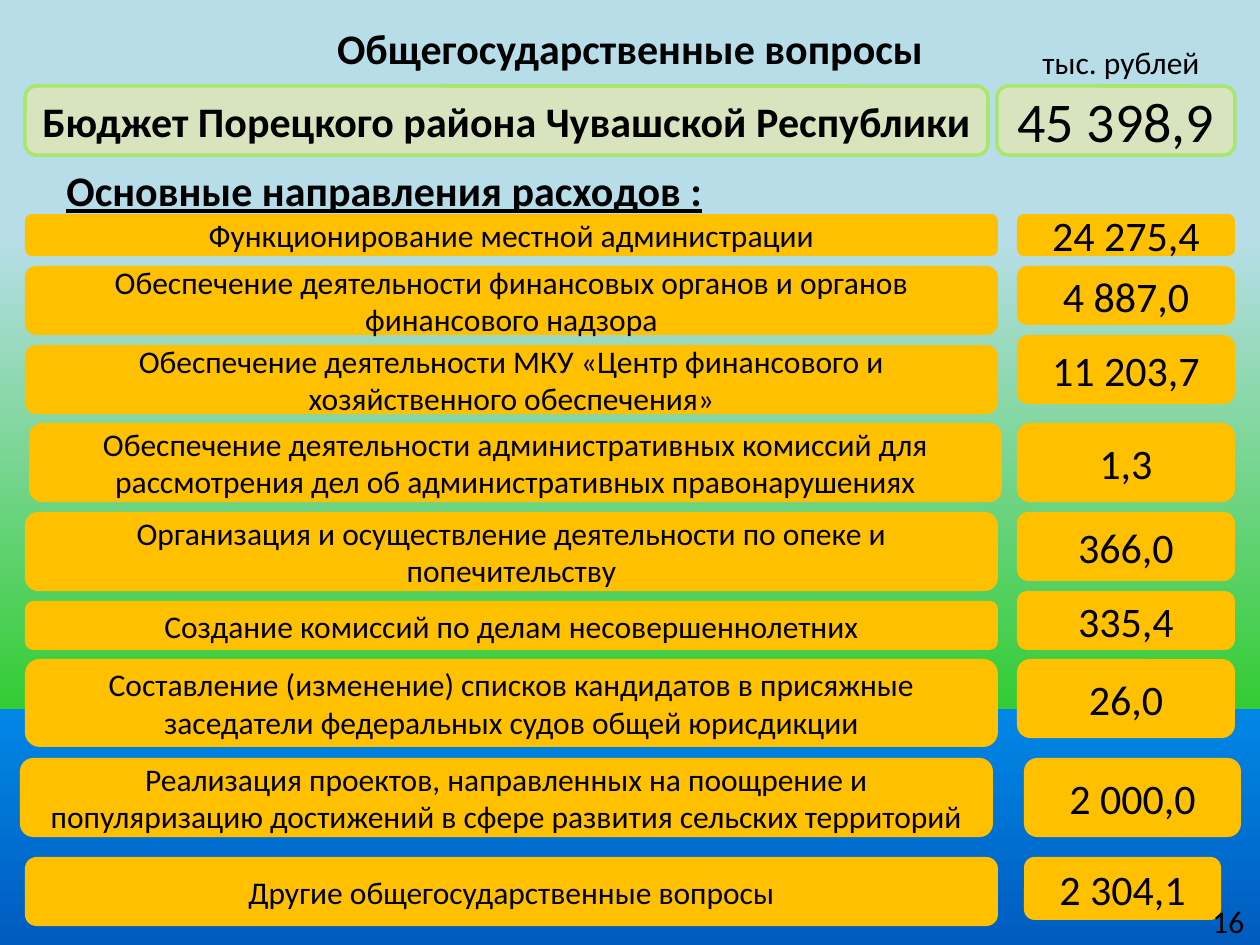
from lxml import etree
from pptx import Presentation
from pptx.dml.color import RGBColor
from pptx.enum.shapes import MSO_SHAPE
from pptx.enum.text import MSO_ANCHOR, PP_ALIGN
from pptx.oxml.ns import qn
from pptx.util import Emu, Pt

SCALE = 914400 / 126
FONT = "Calibri"
BLACK, AMBER, PALE_GREEN, GREEN = "000000", "FFC000", "D7E4BD", "A9E66C"

BACKGROUND = [(25, "B7DEE8"), (75, "33CC33"), (75, "0087E6"), (100, "005CBF")]

TITLE = "Общегосударственные вопросы"
UNIT = "тыс. рублей"
BUDGET = "Бюджет Порецкого района Чувашской Республики"
TOTAL = "45 398,9"
HEADING = "Основные направления расходов :"
PAGE = "16"

LABEL_X, LABEL_W = 25, 973
VALUE_X, VALUE_W = 1017, 218

# label, its top and height, value, its top and height
EXPENSES = [
    ("Функционирование местной администрации", 214, 42, "24 275,4", 214, 42),
    ("Обеспечение деятельности финансовых органов и органов финансового надзора",
     266, 69, "4 887,0", 266, 59),
    ("Обеспечение деятельности МКУ «Центр финансового и хозяйственного обеспечения»",
     345, 69, "11 203,7", 335, 69),
    ("Обеспечение деятельности административных комиссий для рассмотрения дел "
     "об административных правонарушениях", 423, 79, "1,3", 423, 79),
    ("Организация и осуществление деятельности по опеке и попечительству",
     512, 79, "366,0", 512, 69),
    ("Создание комиссий по делам несовершеннолетних", 601, 49, "335,4", 591, 59),
    ("Составление (изменение) списков кандидатов в присяжные заседатели "
     "федеральных судов общей юрисдикции", 659, 88, "26,0", 659, 79),
    ("Реализация проектов, направленных на поощрение и популяризацию достижений "
     "в сфере развития сельских территорий", 758, 79, "2 000,0", 758, 79),
    ("Другие общегосударственные вопросы", 857, 69, "2 304,1", 857, 63),
]
# row: left and width where they differ from the column's
LABEL_SHIFTS = {3: (29, LABEL_W), 7: (20, LABEL_W)}
VALUE_SHIFTS = {7: (1024, 217), 8: (1024, 197)}


def px(n):
    return Emu(round(n * SCALE))


def color(value):
    return RGBColor.from_string(value)


def set_text(sp, text, size, bold=False, underline=False, align=PP_ALIGN.CENTER):
    tf = sp.text_frame
    tf.text = text
    tf.word_wrap = True
    tf.vertical_anchor = MSO_ANCHOR.MIDDLE
    p = tf.paragraphs[0]
    p.alignment = align
    font = p.runs[0].font
    font.name, font.size = FONT, Pt(size)
    font.bold, font.underline = bold, underline
    font.color.rgb = color(BLACK)


def add_box(slide, box, text, size, fill=AMBER, line=None, bold=False):
    sp = slide.shapes.add_shape(MSO_SHAPE.ROUNDED_RECTANGLE, *map(px, box))
    sp.shadow.inherit = False
    sp.fill.solid()
    sp.fill.fore_color.rgb = color(fill)
    if line:
        sp.line.color.rgb = color(line)
        sp.line.width = Pt(2)
    else:
        sp.line.fill.background()
    set_text(sp, text, size, bold)


def add_label(slide, box, text, size, **style):
    set_text(slide.shapes.add_textbox(*map(px, box)), text, size, **style)


def set_background(slide, stops):
    fill = slide.background.fill
    fill.gradient()
    fill.gradient_angle = 270  # counter-clockwise: runs from top to bottom
    gs_list = next(slide.background._cSld.iter(qn("a:gsLst")))
    for gs in list(gs_list):
        gs_list.remove(gs)
    for position, value in stops:
        gs = etree.SubElement(gs_list, qn("a:gs"), pos=str(position * 1000))
        etree.SubElement(gs, qn("a:srgbClr"), val=value)


def main():
    prs = Presentation()
    prs.slide_width, prs.slide_height = px(1260), px(945)
    slide = prs.slides.add_slide(prs.slide_layouts[5])
    set_background(slide, BACKGROUND)

    title = slide.shapes.title
    title.left, title.top, title.width, title.height = map(px, (0, 0, 1260, 96))
    set_text(title, TITLE, 24, bold=True)

    add_box(slide, (25, 86, 963, 69), BUDGET, 24, PALE_GREEN, GREEN, bold=True)
    add_box(slide, (997, 86, 238, 69), TOTAL, 32, PALE_GREEN, GREEN)
    add_label(slide, (54, 155, 932, 69), HEADING, 24,
              bold=True, underline=True, align=PP_ALIGN.LEFT)

    for i, (label, label_y, label_h, value, value_y, value_h) in enumerate(EXPENSES):
        x, w = LABEL_SHIFTS.get(i, (LABEL_X, LABEL_W))
        add_box(slide, (x, label_y, w, label_h), label, 18)
        x, w = VALUE_SHIFTS.get(i, (VALUE_X, VALUE_W))
        add_box(slide, (x, value_y, w, value_h), value, 24)

    add_label(slide, (1017, 37, 208, 49), UNIT, 18)
    add_label(slide, (1197, 896, 63, 49), PAGE, 18)
    prs.save("out.pptx")


if __name__ == "__main__":
    main()
